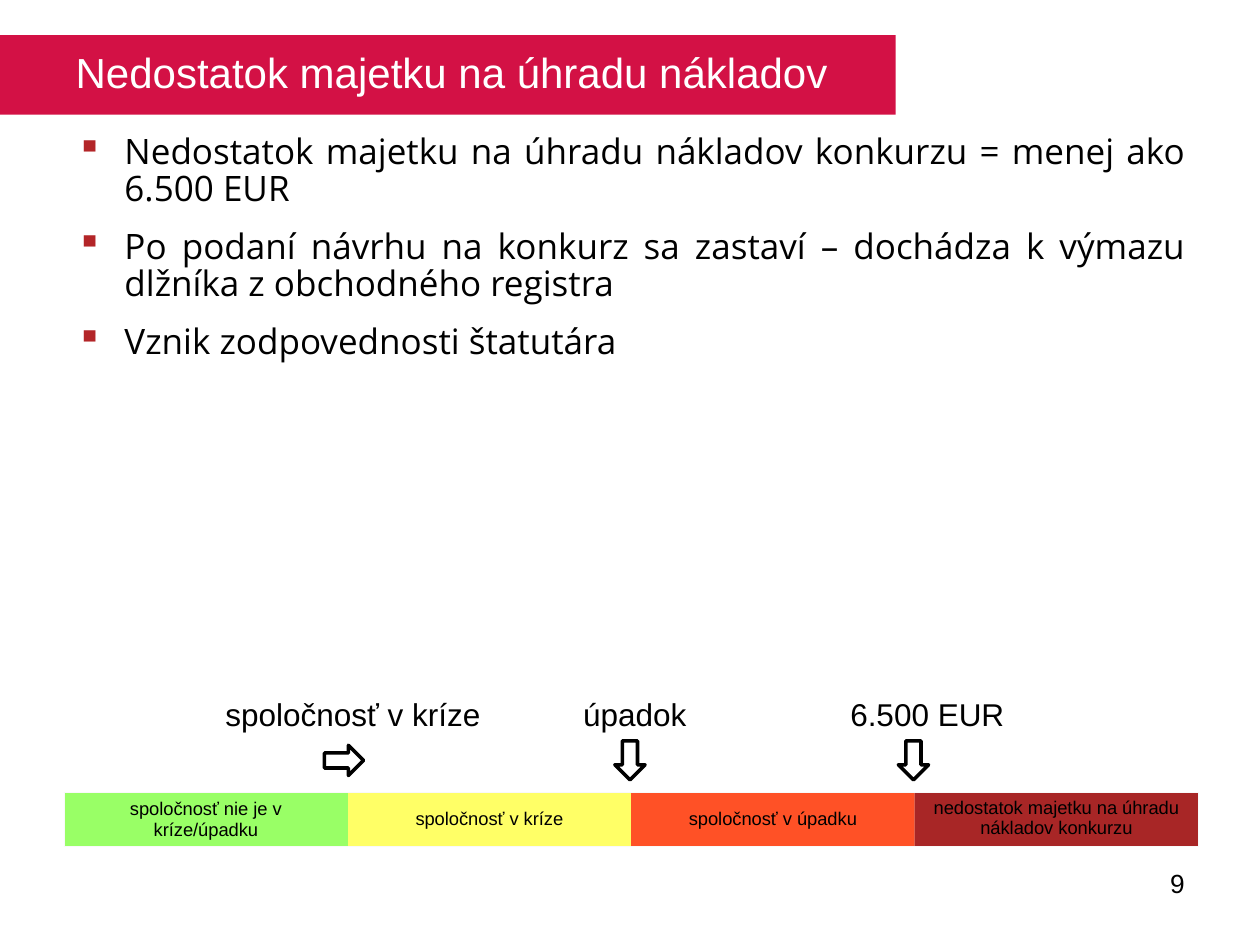
from lxml import etree
from pptx import Presentation, util as u
from pptx.dml.color import RGBColor
from pptx.enum import shapes, text
from pptx.oxml.ns import qn

WIDTH, HEIGHT = 10, 7.5
MARGIN = 0.51
COLUMN = 2.25
SCALE_TOP = 6.29
NO_STYLE = "{2D5ABB26-0587-4C30-8999-92F81FD0307C}"
ALIGN = text.PP_ALIGN

BULLETS = [
    "Nedostatok majetku na úhradu nákladov konkurzu = menej ako 6.500 EUR",
    "Po podaní návrhu na konkurz sa zastaví – dochádza k výmazu dlžníka z obchodného registra",
    "Vznik zodpovednosti štatutára",
]
# Text, fill, opacity in percent, vertical anchor
STAGES = [
    ("spoločnosť nie je v kríze/úpadku", "99FF66", 100, text.MSO_ANCHOR.MIDDLE),
    ("spoločnosť v\u00a0kríze", "FFFF66", 100, text.MSO_ANCHOR.MIDDLE),
    ("spoločnosť v\u00a0úpadku", "FF3300", 85, text.MSO_ANCHOR.MIDDLE),
    ("nedostatok majetku na úhradu nákladov konkurzu", "990000", 85, text.MSO_ANCHOR.TOP),
]
# Label, label left, label width, arrow centre, arrow rotation
MARKERS = [
    ("spoločnosť v kríze", 1.69, 2.28, 2.73, 270),
    ("úpadok", 4.53, 1.08, 5, 0),
    ("6.500 EUR", 6.65, 1.5, 7.25, 0),
]


def color(value):
    return RGBColor.from_string(value)


def inches(*lengths):
    return [u.Inches(length) for length in lengths]


def add_child(parent, tag, **attributes):
    return etree.SubElement(parent, qn(tag), attributes)


def style(para, size, hue="000000", align=ALIGN.LEFT, font="Arial"):
    para.alignment = align
    para.font.size = u.Pt(size)
    para.font.name = font
    para.font.color.rgb = color(hue)


def add_text(slide, content, place, size, align=ALIGN.LEFT):
    frame = slide.shapes.add_textbox(*inches(*place)).text_frame
    frame.word_wrap = True
    frame.text = content
    style(frame.paragraphs[0], size, align=align)


def add_title(slide, content):
    band = slide.shapes.add_shape(shapes.MSO_SHAPE.RECTANGLE, *inches(-0.02, 0.28, 7.13, 0.63))
    band.shadow.inherit = False
    band.fill.solid()
    band.fill.fore_color.rgb = color("D31145")
    band.line.fill.background()

    title = slide.shapes.title
    title.left, title.top, title.width, title.height = inches(0.5, 0.3, 6.63, 0.54)
    title.text_frame.text = content
    title.text_frame.vertical_anchor = text.MSO_ANCHOR.MIDDLE
    style(title.text_frame.paragraphs[0], 24, "FFFFFF")
    band.element.addnext(title.element)  # title in front of the band


def add_bullets(slide, items):
    frame = slide.shapes.add_textbox(*inches(MARGIN, 1.02, 4 * COLUMN, 4.3)).text_frame
    frame.word_wrap = True
    for index, item in enumerate(items):
        para = frame.paragraphs[0] if index == 0 else frame.add_paragraph()
        para.text = item
        para.line_spacing = 0.88
        para.space_before = u.Pt(6 if index else 0)
        para.space_after = u.Pt(6)
        properties = para._p.get_or_add_pPr()
        properties.set("marL", str(u.Inches(0.38)))
        properties.set("indent", str(-u.Inches(0.38)))
        add_child(add_child(properties, "a:buClr"), "a:srgbClr", val="B32528")
        add_child(properties, "a:buChar", char="▪")
        style(para, 20, align=ALIGN.JUSTIFY, font="Open Sans")


def add_border(cell, sides):
    properties = cell._tc.get_or_add_tcPr()
    for side in sides:
        line = add_child(properties, f"a:ln{side}", w=str(u.Pt(0.75)))
        add_child(add_child(line, "a:solidFill"), "a:srgbClr", val="F9F9F9")


def add_scale(slide, stages):
    frame = slide.shapes.add_table(
        1, len(stages), *inches(MARGIN, SCALE_TOP, len(stages) * COLUMN, 0.41))
    frame.element.find(".//" + qn("a:tableStyleId")).text = NO_STYLE
    frame.table.first_row = frame.table.horz_banding = False
    last = len(stages) - 1
    for index, (label, hue, opacity, anchor) in enumerate(stages):
        cell = frame.table.cell(0, index)
        cell.text = label
        cell.vertical_anchor = anchor
        cell.margin_top = cell.margin_bottom = u.Inches(0.04)
        style(cell.text_frame.paragraphs[0], 10.5, align=ALIGN.CENTER)
        add_border(cell, ("L" if index == 0 else "") + ("R" if index == last else "") + "TB")
        cell.fill.solid()
        cell.fill.fore_color.rgb = color(hue)
        if opacity < 100:
            fill = cell._tc.tcPr.find(qn("a:solidFill"))
            add_child(fill[0], "a:alpha", val=str(opacity * 1000))


def add_marker(slide, label, left, width, centre, rotation):
    add_text(slide, label, (left, 5.47, width, 0.4), 18)
    arrow = slide.shapes.add_shape(
        shapes.MSO_SHAPE.DOWN_ARROW, *inches(centre - 0.12, 5.88, 0.24, 0.31))
    arrow.rotation = rotation
    arrow.shadow.inherit = False
    arrow.fill.solid()
    arrow.fill.fore_color.rgb = color("FFFFFF")
    arrow.line.color.rgb = color("000000")
    arrow.line.width = u.Pt(2)


def main():
    deck = Presentation()
    deck.slide_width, deck.slide_height = inches(WIDTH, HEIGHT)
    slide = deck.slides.add_slide(deck.slide_layouts[5])

    add_title(slide, "Nedostatok majetku na úhradu nákladov")
    add_bullets(slide, BULLETS)

    # Scale from a sound company to one without assets
    add_scale(slide, STAGES)
    for marker in MARKERS:
        add_marker(slide, *marker)

    # Page number
    add_text(slide, "9", (7.17, 6.83, 2.33, 0.52), 15, ALIGN.RIGHT)
    deck.save("out.pptx")


if __name__ == "__main__":
    main()
